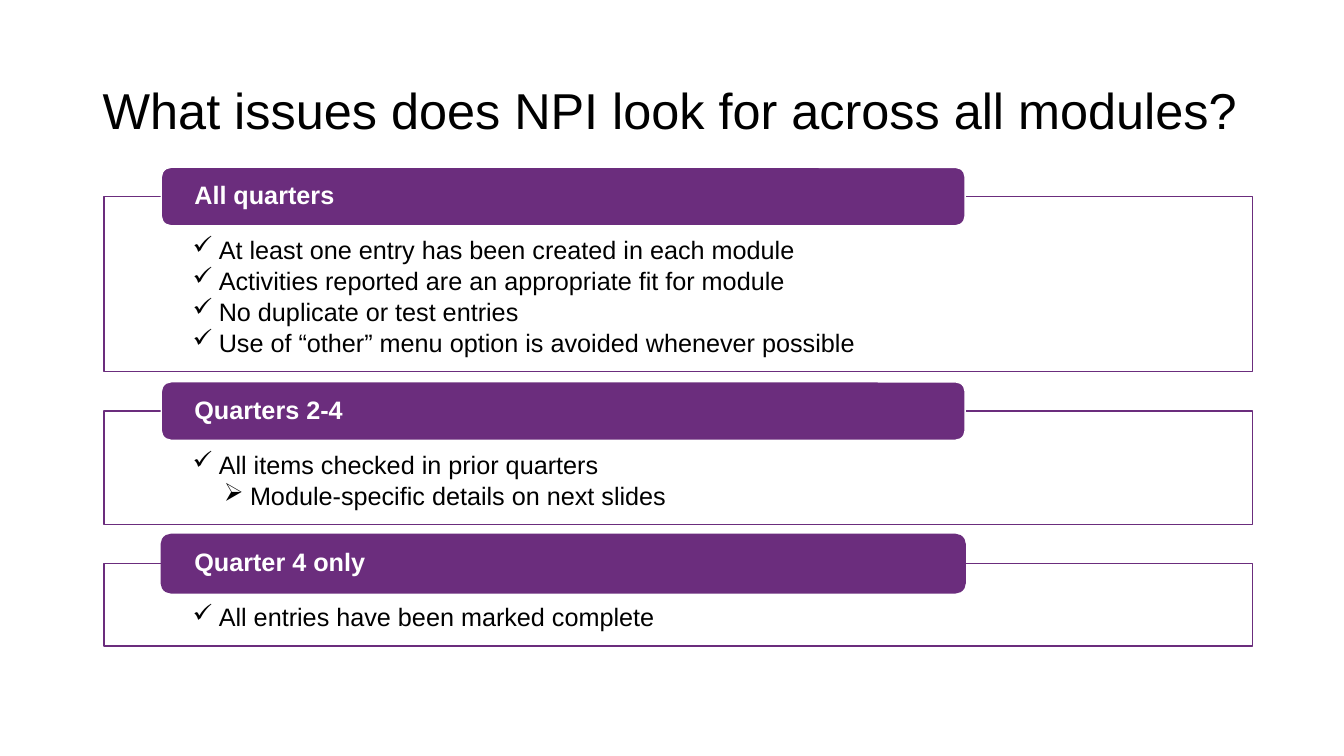
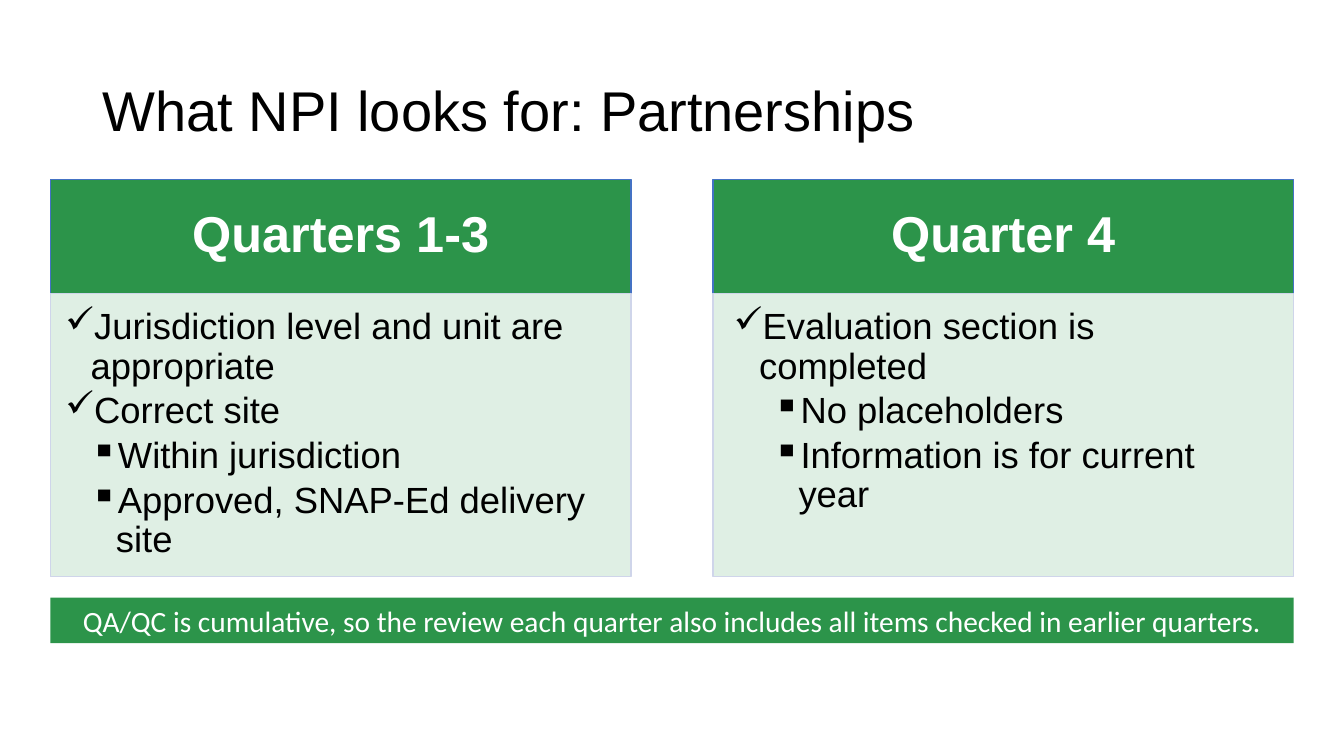
from lxml.etree import SubElement
from pptx import Presentation
from pptx.dml.color import RGBColor as RGB
from pptx.enum.shapes import MSO_SHAPE as SHAPE
from pptx.enum.text import MSO_ANCHOR as ANCHOR, PP_ALIGN as ALIGN
from pptx.oxml.ns import qn
from pptx.util import Inches, Pt

# Content: (level, text) items under each heading
ISSUES = {
    "title": "What issues does NPI look for across all modules?",
    "panels": [
        ("All quarters", "white", [
            (0, "At least one entry has been created in each module"),
            (0, "Activities reported are an appropriate fit for module"),
            (0, "No duplicate or test entries"),
            (0, "Use of “other” menu option is avoided whenever possible")]),
        ("Quarters 2-4", "white", [
            (0, "All items checked in prior quarters"),
            (1, "Module-specific details on next slides")]),
        ("Quarter 4 only", "purple", [
            (0, "All entries have been marked complete")]),
    ],
}
PARTNERSHIPS = {
    "title": "What NPI looks for: Partnerships",
    "columns": [
        ("Quarters 1-3", (0.25, 0.5), [
            (0, "Jurisdiction level and unit are appropriate"),
            (0, "Correct site"),
            (1, "Within jurisdiction"),
            (1, "Approved, SNAP-Ed delivery site")]),
        ("Quarter 4", (0.31, 0.7), [
            (0, "Evaluation section is completed"),
            (1, "No placeholders"),
            (1, "Information is for current year")]),
    ],
    "banner": "QA/QC is cumulative, so the review each quarter also "
              "includes all items checked in earlier quarters.",
}

# Theme
COLOR = {name: RGB.from_string(code) for name, code in {
    "black": "000000", "white": "FFFFFF", "purple": "6B2D7D",
    "green": "2C944A", "blue": "4472C4", "mist": "CFD5EA"}.items()}
STYLE = {
    "title": {"size": 36, "color": "black"},
    "big title": {"size": 40, "color": "black"},
    "tab": {"size": 18, "color": "white", "bold": True},
    "item": {"size": 18, "color": "black"},
    "heading": {"size": 36, "color": "white", "bold": True},
    "large item": {"size": 26, "color": "black"},
    "banner": {"size": 21, "color": "white", "font": "Calibri", "leading": 1.0},
}
W, H = 13.33, 7.5


def add_text(tf, lines, style, insets=(0.1, 0.05, 0.1, 0.05),
             anchor=ANCHOR.MIDDLE, align=ALIGN.LEFT, after=0, bullets=None):
    """Write (level, text) lines; bullets gives (mark, indent, hang) per level."""
    st = STYLE[style]
    frame = dict(zip(("margin_left", "margin_top", "margin_right", "margin_bottom"),
                     map(Inches, insets)), word_wrap=True, vertical_anchor=anchor)
    for name, value in frame.items():
        setattr(tf, name, value)
    for i, (level, text) in enumerate(lines):
        p = tf.add_paragraph() if i else tf.paragraphs[0]
        if bullets:
            mark, indent, hang = bullets[level]
            pPr = p._p.get_or_add_pPr()
            pPr.set("marL", str(Inches(indent)))
            pPr.set("indent", str(-Inches(hang)))
            SubElement(pPr, qn("a:buChar")).set("char", mark)
        for name, value in {"level": level, "alignment": align,
                            "line_spacing": st.get("leading", 0.9),
                            "space_before": Pt(0),
                            "space_after": Pt(after * st["size"])}.items():
            setattr(p, name, value)
        r = p.add_run()
        r.text = text
        for name, value in {"name": st.get("font", "Arial"), "size": Pt(st["size"]),
                            "bold": st.get("bold", False)}.items():
            setattr(r.font, name, value)
        r.font.color.rgb = COLOR[st["color"]]


def add_box(s, box, fill, line=None, kind=SHAPE.RECTANGLE, alpha=None):
    sp = s.shapes.add_shape(kind, *map(Inches, box))
    sp.shadow.inherit = False
    sp.fill.solid()
    sp.fill.fore_color.rgb = COLOR[fill]
    if alpha:
        color = sp.fill._xPr.find(qn("a:solidFill"))[0]
        SubElement(color, qn("a:alpha")).set("val", str(alpha * 1000))
    if line:
        sp.line.color.rgb = COLOR[line]
        sp.line.width = Pt(1)
    else:
        sp.line.fill.background()
    return sp.text_frame


def add_slide(prs, title, style):
    s = prs.slides.add_slide(prs.slide_layouts[6])
    tb = s.shapes.add_textbox(*map(Inches, (0.92, 0.4, 11.5, 1.45)))
    add_text(tb.text_frame, [(0, title)], style)
    return s


def build_issues(prs):
    s = add_slide(prs, ISSUES["title"], "title")
    left, width, top, gap = 1.03, 11.39, 1.66, 0.1
    tab_h, pad, row = 0.58, 0.51, 22.1 / 72
    bullets = [("✓", 0.26, 0.26), ("➢", 0.57, 0.26)]
    for heading, edge, items in ISSUES["panels"]:
        # Outlined panel, with its tab straddling the top edge
        panel_top, panel_h = top + tab_h / 2, pad + row * len(items)
        tf = add_box(s, (left, panel_top, width, panel_h), "white", "purple")
        add_text(tf, items, "item", (0.88, 0.41, 0.88, 0.14), ANCHOR.TOP,
                 after=0.15, bullets=bullets)
        tf = add_box(s, (left + width * 0.05, top, width * 0.7, tab_h),
                     "purple", edge, SHAPE.ROUNDED_RECTANGLE)
        add_text(tf, [(0, heading)], "tab", (0.3, 0, 0.3, 0))
        top = panel_top + panel_h + gap


def build_partnerships(prs):
    s = add_slide(prs, PARTNERSHIPS["title"], "big title")
    margin, gap, top, head_h, body_h = 0.5, 0.81, 1.78, 1.13, 2.81
    columns = PARTNERSHIPS["columns"]
    full = W - 2 * margin
    col_w = (full - gap * (len(columns) - 1)) / len(columns)
    for i, (heading, indents, items) in enumerate(columns):
        # Solid heading above a tinted list
        x = margin + i * (col_w + gap)
        tf = add_box(s, (x, top, col_w, head_h), "green", "blue")
        add_text(tf, [(0, heading)], "heading", (0.28, 0.16, 0.28, 0.16),
                 align=ALIGN.CENTER)
        tf = add_box(s, (x, top + head_h, col_w, body_h), "green", "mist", alpha=15)
        add_text(tf, items, "large item", (0.15, 0.15, 0.2, 0.23), ANCHOR.TOP, after=0.15,
                 bullets=[(mark, ind, 0.25) for mark, ind in zip("✓▪", indents)])
    # Closing banner
    tf = add_box(s, (margin, 5.93, full, 0.45), "green")
    add_text(tf, [(0, PARTNERSHIPS["banner"])], "banner", align=ALIGN.CENTER)


def main():
    prs = Presentation()
    prs.slide_width, prs.slide_height = Inches(W), Inches(H)
    build_issues(prs)
    build_partnerships(prs)
    prs.save("out.pptx")


if __name__ == "__main__":
    main()
